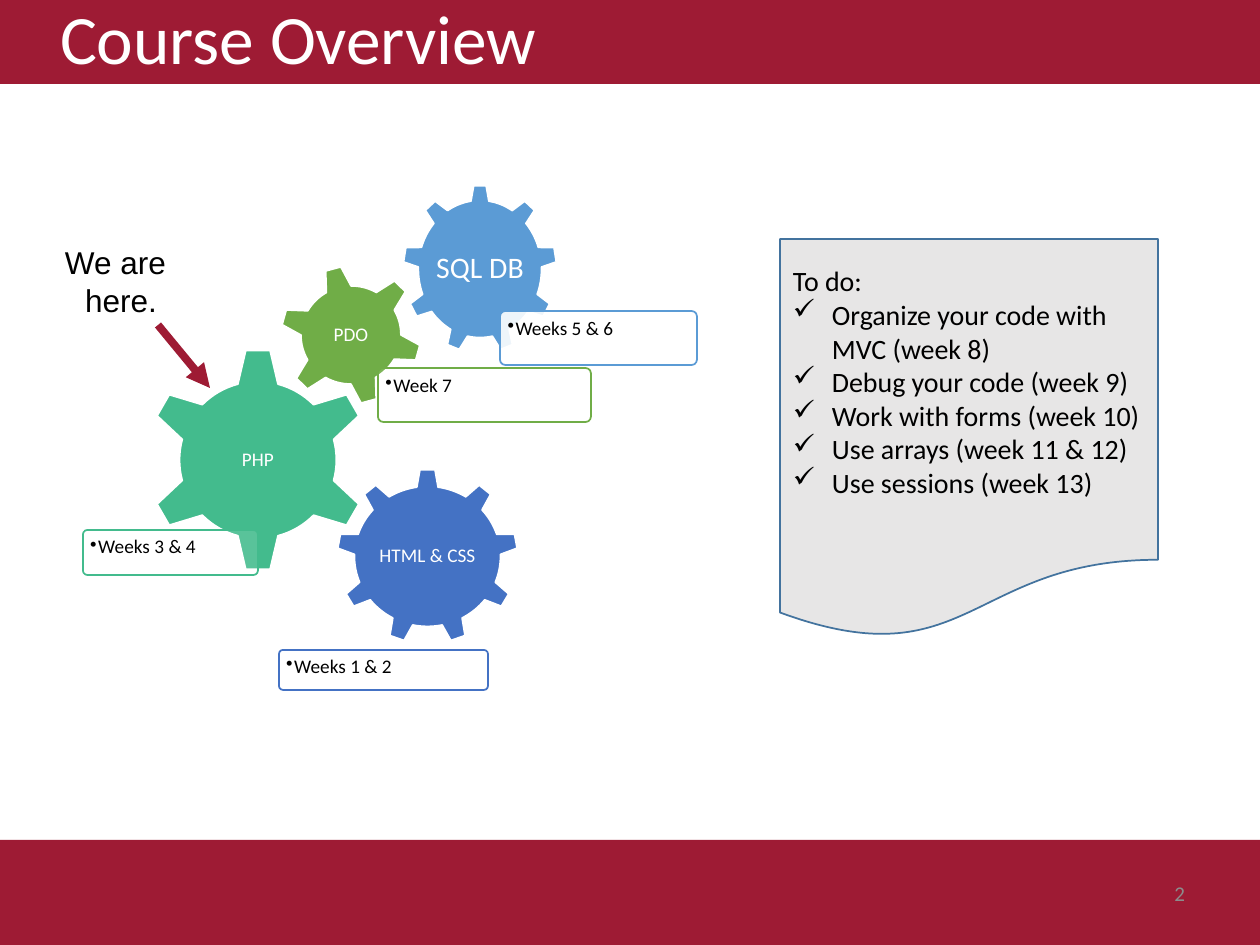
import pptx
import pptx.util
import pptx.dml.color
import pptx.enum.shapes
import pptx.enum.text
import pptx.oxml.ns
import lxml.etree

EMU_PER_PX = 914400 / 126
SHAPE = pptx.enum.shapes.MSO_SHAPE
ALIGN = pptx.enum.text.PP_ALIGN
ANCHOR = pptx.enum.text.MSO_ANCHOR
CRIMSON, WHITE, BLACK = "9E1B34", "FFFFFF", "000000"


def px(*lengths):
    return [pptx.util.Emu(round(length * EMU_PER_PX)) for length in lengths]


def color(hex_string):
    return pptx.dml.color.RGBColor.from_string(hex_string)


def add_xml(parent, tag, **attributes):
    child = lxml.etree.SubElement(parent, pptx.oxml.ns.qn(tag))
    for name, value in attributes.items():
        child.set(name, str(value))
    return child


class SlideBuilder:
    """Holds the style and the slide being built."""

    font = "Calibri"

    def __init__(self, slide):
        self.slide = slide

    def frame(self, shape, anchor, insets):
        text_frame = shape.text_frame
        text_frame.word_wrap = True
        text_frame.auto_size = pptx.enum.text.MSO_AUTO_SIZE.NONE
        text_frame.vertical_anchor = anchor
        (text_frame.margin_left, text_frame.margin_top,
         text_frame.margin_right, text_frame.margin_bottom) = px(*insets)
        return text_frame

    def style(self, para, size, hex_color, align=ALIGN.LEFT, spacing=None, font=None):
        para.alignment = align
        para.line_spacing = spacing
        for run in para.runs:
            run.font.size = pptx.util.Pt(size)
            run.font.name = font or self.font
            run.font.color.rgb = color(hex_color)

    def bullet(self, para, mark, indent):
        properties = para._p.get_or_add_pPr()
        (width,) = px(indent)
        properties.set("marL", str(width))
        properties.set("indent", str(-width))
        add_xml(properties, "a:buChar", char=mark)

    def shape(self, kind, box, fill, line=None, opacity=100):
        shape = self.slide.shapes.add_shape(kind, *px(*box))
        shape.shadow.inherit = False
        shape.fill.solid()
        shape.fill.fore_color.rgb = color(fill)
        if opacity < 100:
            fill_color = shape._element.spPr.find(".//" + pptx.oxml.ns.qn("a:srgbClr"))
            add_xml(fill_color, "a:alpha", val=opacity * 1000)
        if line:
            shape.line.color.rgb = color(line)
            shape.line.width = pptx.util.Pt(1)
        else:
            shape.line.fill.background()
        return shape

    def title(self, text, box):
        title = self.slide.shapes.title
        title.left, title.top, title.width, title.height = px(*box)
        title.fill.solid()
        title.fill.fore_color.rgb = color(CRIMSON)
        text_frame = self.frame(title, ANCHOR.MIDDLE, (60, 6, 12, 6))
        text_frame.text = text
        self.style(text_frame.paragraphs[0], 39.6, WHITE, spacing=0.9)

    def text(self, lines, box, size, hex_color, aligns, anchor=ANCHOR.TOP,
             insets=(12, 6, 12, 6), spacing=None, font=None):
        text_box = self.slide.shapes.add_textbox(*px(*box))
        text_frame = self.frame(text_box, anchor, insets)
        text_frame.text = "\n".join(lines)
        for para, align in zip(text_frame.paragraphs, aligns):
            self.style(para, size, hex_color, align, spacing, font)

    def gear(self, kind, text, box, fill, face_share, size=11, rotation=0):
        self.shape(kind, box, fill, WHITE).rotation = rotation
        # The name stays level on the gear's face, even when the gear turns
        left, top, width, height = box
        face_width, face_height = width * face_share, height * 0.52
        face = (left + (width - face_width) / 2, top + (height - face_height) / 2,
                face_width, face_height)
        self.text([text], face, size, WHITE, [ALIGN.CENTER], ANCHOR.MIDDLE,
                  (2, 2, 2, 2), 0.9)

    def label(self, text, box, line, opacity):
        label = self.shape(SHAPE.ROUNDED_RECTANGLE, box, WHITE, line, opacity)
        label.adjustments[0] = 0.1
        text_frame = self.frame(label, ANCHOR.TOP, (6, 6, 6, 6))
        text_frame.text = text
        para = text_frame.paragraphs[0]
        self.style(para, 11, BLACK, spacing=0.9)
        self.bullet(para, "•", 8)

    def checklist(self, heading, items, box):
        note = self.shape(SHAPE.FLOWCHART_DOCUMENT, box, "E7E6E6", "43739E")
        text_frame = self.frame(note, ANCHOR.MIDDLE, (13, 6, 12, 42))
        text_frame.text = "\n".join([heading, *items])
        for para in text_frame.paragraphs:
            self.style(para, 16, BLACK)
        for para in text_frame.paragraphs[1:]:
            self.bullet(para, "✓", 39)

    def arrow(self, start, end):
        arrow = self.slide.shapes.add_connector(
            pptx.enum.shapes.MSO_CONNECTOR.STRAIGHT, *px(*start, *end))
        arrow.line.color.rgb = color(CRIMSON)
        arrow.line.width = pptx.util.Pt(4.5)
        add_xml(arrow.line._get_or_add_ln(), "a:tailEnd", type="triangle")
        add_xml(arrow._element.spPr, "a:effectLst")


def main():
    deck = pptx.Presentation()
    deck.slide_width, deck.slide_height = px(1260, 945)
    page = SlideBuilder(deck.slides.add_slide(deck.slide_layouts[5]))

    # Title bar and footer band
    page.shape(SHAPE.RECTANGLE, (0, 840, 1260, 105), CRIMSON)
    page.title("Course Overview", (0, 0, 1260, 84))
    page.text(["2"], (903, 872, 294, 42), 12, "8C8C8C", [ALIGN.RIGHT], ANCHOR.MIDDLE)

    # Course topics as gears, each with its weeks
    page.gear(SHAPE.GEAR_9, "SQL DB", (403, 185, 154, 168), "5B9BD5", 0.6, size=17)
    page.label("Weeks 5 & 6", (500, 311, 197, 54), "5B9BD5", 90)
    page.gear(SHAPE.GEAR_9, "HTML & CSS", (337, 469, 181, 175), "4472C4", 0.6)
    page.label("Weeks 1 & 2", (279, 650, 209, 40), "4472C4", 10)
    page.gear(SHAPE.GEAR_6, "PHP", (146, 348, 224, 224), "43BB8D", 0.5)
    page.label("Weeks 3 & 4", (83, 530, 175, 45), "43BB8D", 12)
    page.gear(SHAPE.GEAR_6, "PDO", (280, 265, 142, 140), "70AD47", 0.56, rotation=345)
    page.label("Week 7", (378, 368, 213, 54), "70AD47", 10)

    # Remaining work
    page.checklist("To do:", [
        "Organize your code with MVC (week 8)",
        "Debug your code (week 9)",
        "Work with forms (week 10)",
        "Use arrays (week 11 & 12)",
        "Use sessions (week 13)",
    ], (780, 239, 378, 400))

    # Current position in the course
    page.text(["We are", "here."], (53, 237, 136, 89), 18, BLACK,
              [ALIGN.LEFT, ALIGN.CENTER], font="Arial")
    page.arrow((158, 325), (210, 388))

    deck.save("out.pptx")


if __name__ == "__main__":
    main()
